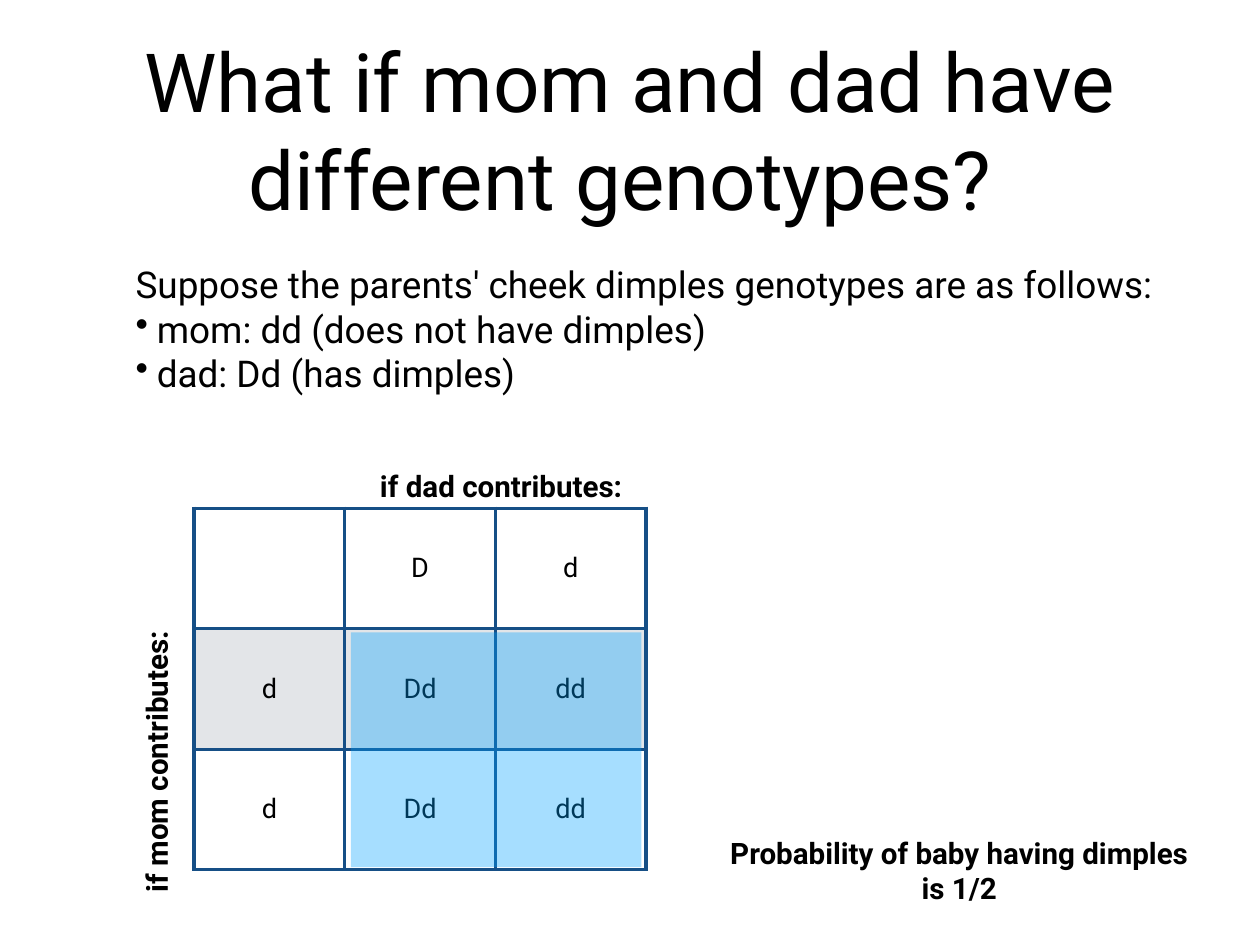
"""Build a slide with a Punnett square for cheek dimples."""
from lxml import etree
from pptx import Presentation
from pptx.dml.color import RGBColor
from pptx.enum.shapes import MSO_SHAPE
from pptx.enum.text import MSO_ANCHOR, PP_ALIGN
from pptx.oxml.ns import qn
from pptx.util import Inches, Pt

RECTANGLE = MSO_SHAPE.RECTANGLE
MIDDLE = MSO_ANCHOR.MIDDLE
LEFT, CENTER = PP_ALIGN.LEFT, PP_ALIGN.CENTER
FONT = "Roboto"
COLORS = {
    "text": "000000",
    "white": "FFFFFF",
    "band": "E3E5E8",
    "border": "164F86",
    "highlight": "00A2FF",
}


def color(name):
    return RGBColor.from_string(COLORS[name])


def write_text(frame, text, size=24, bold=False, align=CENTER, wrap=True, bullet_indent=0.24):
    """Fill a text frame, turning lines that start with a bullet into list items."""
    frame.word_wrap = wrap
    frame.vertical_anchor = MIDDLE
    frame.margin_left = frame.margin_right = Inches(0.06)
    frame.margin_top = frame.margin_bottom = Inches(0.06)
    for index, line in enumerate(text.split("\n")):
        paragraph = frame.paragraphs[0] if index == 0 else frame.add_paragraph()
        paragraph.alignment = align
        run = paragraph.add_run()
        run.text = line.removeprefix("• ")
        run.font.name = FONT
        run.font.size = Pt(size)
        run.font.bold = bold
        run.font.color.rgb = color("text")
        if line.startswith("• "):
            properties = paragraph._p.get_or_add_pPr()
            properties.set("marL", str(Inches(bullet_indent)))
            properties.set("indent", str(-Inches(bullet_indent)))
            etree.SubElement(properties, qn("a:buChar"), char="•")


presentation = Presentation()
presentation.slide_width = Inches(14.22)
presentation.slide_height = Inches(10.67)
slide = presentation.slides.add_slide(presentation.slide_layouts[6])

title = slide.shapes.add_textbox(Inches(1.04), Inches(0.28), Inches(12.14), Inches(2.36))
write_text(title.text_frame, "What if mom and dad have different genotypes? ", size=66.4)

genotypes = [["", "D", "d"], ["d", "Dd", "dd"], ["d", "Dd", "dd"]]
row_fills = ["white", "band", "white"]
table = slide.shapes.add_table(
    3, 3, Inches(2.19), Inches(5.74), Inches(5.11), Inches(4.09)
).table
table.first_row = table.horz_banding = False
for column in table.columns:
    column.width = Inches(1.7)
for row, fill_name, row_texts in zip(table.rows, row_fills, genotypes):
    row.height = Inches(1.36)
    for cell, text in zip(row.cells, row_texts):
        cell.vertical_anchor = MIDDLE
        cell.margin_left = cell.margin_right = Inches(0.06)
        cell.margin_top = cell.margin_bottom = Inches(0.06)
        if text:
            write_text(cell.text_frame, text, size=22)
        cell_properties = cell._tc.get_or_add_tcPr()
        for side in ("a:lnL", "a:lnR", "a:lnT", "a:lnB"):
            border = etree.SubElement(cell_properties, qn(side), w=str(Pt(3)))
            border_fill = etree.SubElement(border, qn("a:solidFill"))
            etree.SubElement(border_fill, qn("a:srgbClr"), val=COLORS["border"])
        cell.fill.solid()
        cell.fill.fore_color.rgb = color(fill_name)

parents = slide.shapes.add_textbox(Inches(1.47), Inches(2.91), Inches(12.7), Inches(1.6))
write_text(
    parents.text_frame,
    "Suppose the parents' cheek dimples genotypes are as follows:\n"
    "• mom: dd (does not have dimples)\n"
    "• dad: Dd (has dimples)",
    size=30,
    align=LEFT,
)

labels = [
    ("if dad contributes:", 4.15, 5.23, 3.01, 0.5, 0),
    ("if mom contributes:", 0.15, 8.35, 3.22, 0.5, 270),
    ("Probability of baby having dimples\nis 1/2", 7.99, 9.37, 5.67, 0.91, 0),
]
for text, left, top, width, height, rotation in labels:
    label = slide.shapes.add_textbox(Inches(left), Inches(top), Inches(width), Inches(height))
    label.rotation = rotation
    write_text(label.text_frame, text, bold=True, wrap=False)

highlight = slide.shapes.add_shape(
    RECTANGLE, Inches(3.96), Inches(7.14), Inches(3.28), Inches(2.65)
)
highlight.shadow.inherit = False
highlight.line.fill.background()
highlight.fill.solid()
highlight.fill.fore_color.rgb = color("highlight")
highlight_color = highlight._element.spPr.find(qn("a:solidFill")).find(qn("a:srgbClr"))
etree.SubElement(highlight_color, qn("a:alpha"), val="35000")

presentation.save("out.pptx")
